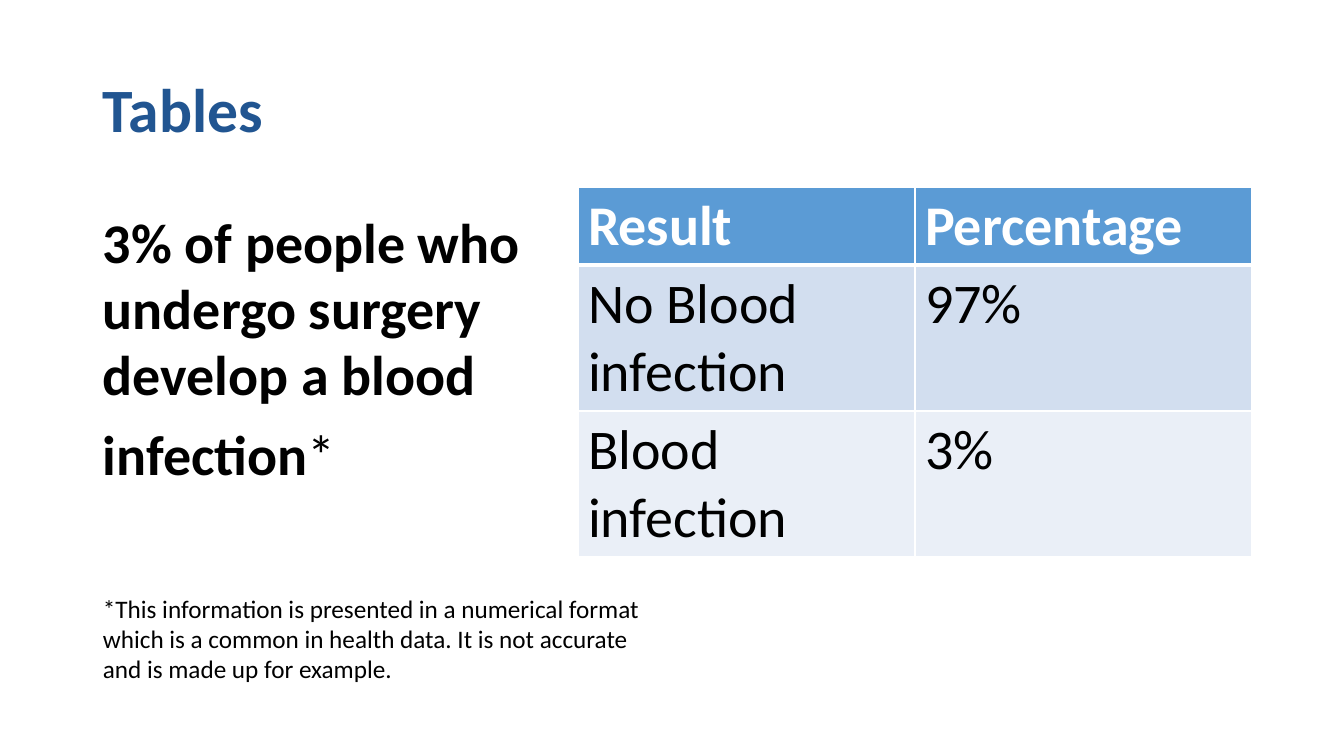
from lxml.etree import SubElement
from pptx import Presentation
from pptx.dml.color import RGBColor
from pptx.enum.text import MSO_ANCHOR
from pptx.oxml.ns import qn
from pptx.util import Emu, Pt

COLORS = {
    "title": "215591",
    "text": "000000",
    "white": "FFFFFF",
    "header": "5B9BD5",
    "band_dark": "D2DEEF",
    "band_light": "EAEFF7",
}
EMU_PER_PX = 914400 / 100.8


def px(n):
    return Emu(round(n * EMU_PER_PX))


class SlideBuilder:
    font = "Calibri"

    def __init__(self, prs):
        self.s = prs.slides.add_slide(prs.slide_layouts[6])

    def style(self, p, size, color, bold=False):
        p.font.name = self.font
        p.font.size = Pt(size)
        p.font.bold = bold
        p.font.color.rgb = RGBColor.from_string(COLORS[color])

    def text(self, x, y, w, h, paragraphs, size, color="text", bold=False,
             anchor=MSO_ANCHOR.TOP, spacing=1.0):
        tf = self.s.shapes.add_textbox(px(x), px(y), px(w), px(h)).text_frame
        tf.word_wrap = True
        tf.vertical_anchor = anchor
        for i, content in enumerate(paragraphs):
            p = tf.add_paragraph() if i else tf.paragraphs[0]
            p.text = content
            p.line_spacing = spacing
            if i:
                p.space_before = Pt(10)
            self.style(p, size, color, bold)
        return tf

    def border(self, cell, side, width):
        ln = SubElement(cell._tc.get_or_add_tcPr(), qn(f"a:ln{side}"),
                        w=str(Pt(width)))
        fill = SubElement(ln, qn("a:solidFill"))
        SubElement(fill, qn("a:srgbClr"), val=COLORS["white"])

    def table(self, x, y, col_width, row_heights, rows, fills, size):
        n_cols = len(rows[0])
        table = self.s.shapes.add_table(
            len(rows), n_cols, px(x), px(y),
            px(col_width * n_cols), px(sum(row_heights))).table
        for col in table.columns:
            col.width = px(col_width)
        for r, (height, values, fill) in enumerate(zip(row_heights, rows, fills)):
            table.rows[r].height = px(height)
            header = r == 0
            for c, value in enumerate(values):
                cell = table.cell(r, c)
                cell.text = value
                self.style(cell.text_frame.paragraphs[0], size,
                           "white" if header else "text", header)
                # Borders must precede the fill in the cell properties
                for side in "LRTB":
                    thick = (r, side) in ((0, "B"), (1, "T"))
                    self.border(cell, side, 3 if thick else 1)
                cell.fill.solid()
                cell.fill.fore_color.rgb = RGBColor.from_string(COLORS[fill])


def main():
    prs = Presentation()
    prs.slide_width, prs.slide_height = px(1344), px(756)
    sb = SlideBuilder(prs)

    sb.text(93, 40, 1159, 146, ["Tables"], 44, "title", True,
            MSO_ANCHOR.MIDDLE, 0.9)
    statement = sb.text(
        93, 206, 572, 300,
        ["3% of people who undergo surgery develop a blood", "infection"],
        40, bold=True, spacing=0.98)
    asterisk = statement.paragraphs[1].add_run()
    asterisk.text = "*"
    asterisk.font.bold = False
    sb.text(93, 588, 572, 102,
            ["*This information is presented in a numerical format which is a "
             "common in health data. It is not accurate and is made up for "
             "example."], 18)
    sb.table(578, 187, 337, [78, 146, 146],
             [["Result", "Percentage"],
              ["No Blood infection", "97%"],
              ["Blood infection", "3%"]],
             ["header", "band_dark", "band_light"], 40)

    prs.save("out.pptx")


if __name__ == "__main__":
    main()
